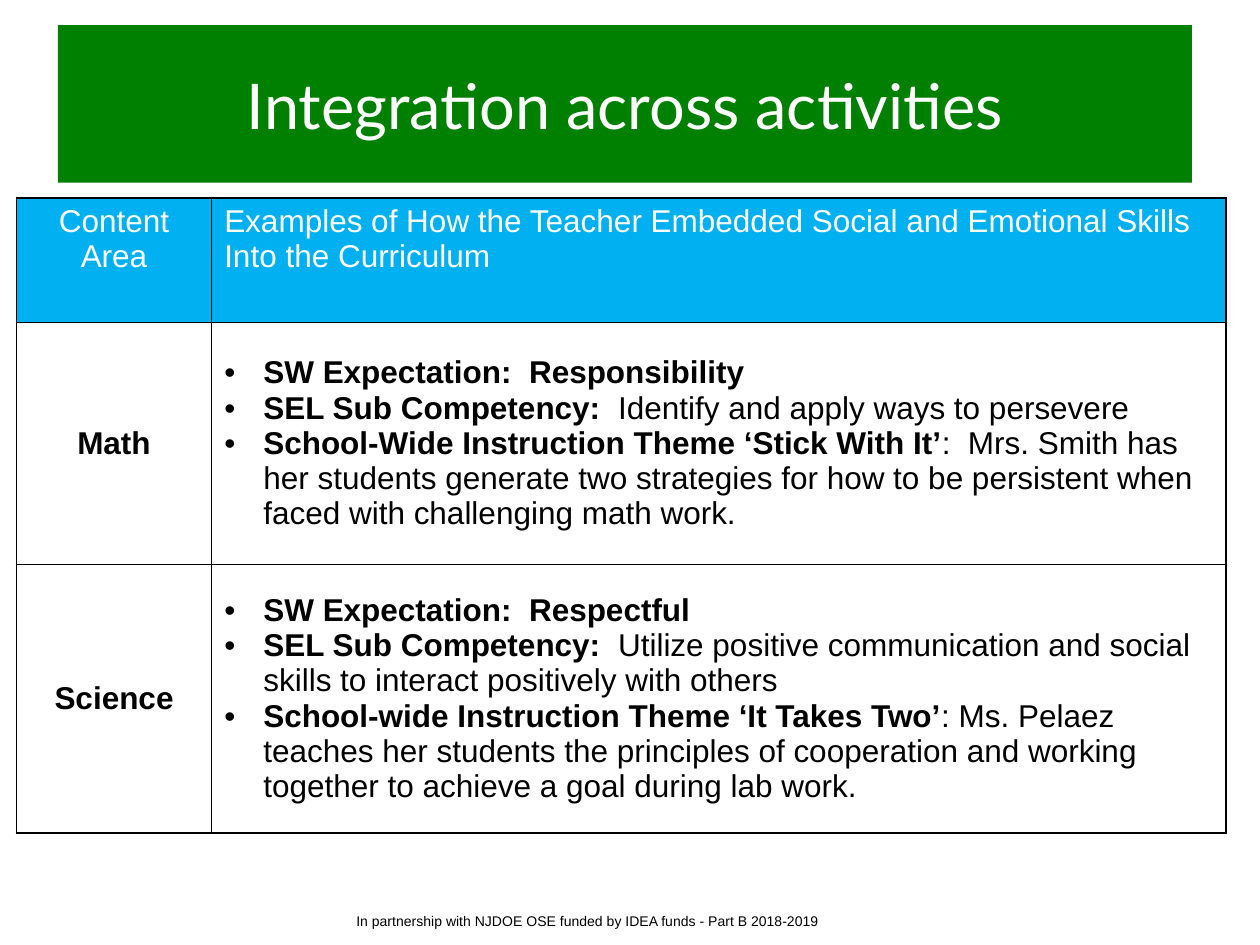
from lxml import etree
from pptx import Presentation
from pptx.dml.color import RGBColor
from pptx.enum.text import MSO_ANCHOR, MSO_AUTO_SIZE, PP_ALIGN
from pptx.oxml.ns import qn
from pptx.util import Inches, Pt

CENTER, LEFT = PP_ALIGN.CENTER, PP_ALIGN.LEFT
TOP, MIDDLE = MSO_ANCHOR.TOP, MSO_ANCHOR.MIDDLE
NO_FIT = MSO_AUTO_SIZE.NONE
TITLE_ONLY = 5

COLORS = {"green": "008000", "blue": "00B0F0", "white": "FFFFFF", "black": "000000"}
TITLE = {"name": "Lato", "size": Pt(36), "bold": False}
BODY = {"name": "Arial", "size": Pt(18), "bold": False}
STRONG = {**BODY, "bold": True}
FOOTER = {**BODY, "size": Pt(8)}

COLUMN_WIDTHS = [1.55, 8.05]
ROW_HEIGHTS = [0.99, 1.92, 2.13]
HEADINGS = [
    "Content Area",
    "Examples of How the Teacher Embedded Social and Emotional Skills Into the Curriculum",
]
SUBJECTS = [
    ("Math", [
        ("SW Expectation:  Responsibility", ""),
        ("SEL Sub Competency:  ", "Identify and apply ways to persevere"),
        ("School-Wide Instruction Theme ‘Stick With It’",
         ":  Mrs. Smith has her students generate two strategies for how to be "
         "persistent when faced with challenging math work."),
    ]),
    ("Science", [
        ("SW Expectation:  Respectful", ""),
        ("SEL Sub Competency:  ",
         "Utilize positive communication and social skills to interact positively with others"),
        ("School-wide Instruction Theme ‘It Takes Two’",
         ": Ms. Pelaez  teaches her students the principles of cooperation and "
         "working together to achieve a goal during lab work."),
    ]),
]


def paint(fill, color):
    """Fill an element with a solid named colour."""
    fill.solid()
    fill.fore_color.rgb = RGBColor.from_string(COLORS[color])


def add_span(para, text, style, color="black"):
    """Append a formatted run to a paragraph."""
    span = para.add_run()
    span.text = text
    for name, value in style.items():
        setattr(span.font, name, value)
    span.font.color.rgb = RGBColor.from_string(COLORS[color])


def add_bullet(para):
    """Give a paragraph a hanging round bullet."""
    properties = para._p.get_or_add_pPr()
    properties.set("marL", str(Inches(0.31)))
    properties.set("indent", str(-Inches(0.31)))
    etree.SubElement(properties, qn("a:buFont"), typeface="Arial")
    etree.SubElement(properties, qn("a:buChar"), char="•")


def add_borders(cell):
    """Draw a thin black line on every side of a cell."""
    properties = cell._tc.get_or_add_tcPr()
    for side in ("lnL", "lnR", "lnT", "lnB"):
        line = etree.SubElement(properties, qn(f"a:{side}"), w=str(Pt(1)))
        fill = etree.SubElement(line, qn("a:solidFill"))
        etree.SubElement(fill, qn("a:srgbClr"), val=COLORS["black"])


def format_cell(cell, anchor):
    """Set the borders, margins and anchor of a cell."""
    add_borders(cell)
    cell.margin_left = cell.margin_right = Inches(0.1)
    cell.margin_top = cell.margin_bottom = Inches(0.05)
    cell.vertical_anchor = anchor


def fill_heading(cell, text, align):
    """Write a white heading on a blue cell."""
    format_cell(cell, TOP)
    paint(cell.fill, "blue")
    para = cell.text_frame.paragraphs[0]
    para.alignment = align
    add_span(para, text, BODY, "white")


def fill_subject(cell, text):
    """Write a bold centred subject name."""
    format_cell(cell, MIDDLE)
    cell.fill.background()
    para = cell.text_frame.paragraphs[0]
    para.alignment = CENTER
    add_span(para, text, STRONG)


def fill_examples(cell, examples):
    """Write bulleted examples with bold lead-ins."""
    format_cell(cell, MIDDLE)
    cell.fill.background()
    frame = cell.text_frame
    for index, (lead, detail) in enumerate(examples):
        para = frame.add_paragraph() if index else frame.paragraphs[0]
        add_bullet(para)
        add_span(para, lead, STRONG)
        if detail:
            add_span(para, detail, BODY)


def add_curriculum_table(page):
    """Add the table of subjects and their examples."""
    table = page.shapes.add_table(
        len(ROW_HEIGHTS), len(COLUMN_WIDTHS), Inches(0.13), Inches(1.57),
        Inches(sum(COLUMN_WIDTHS)), Inches(sum(ROW_HEIGHTS))).table
    table.first_row = table.horz_banding = False
    for column, width in zip(table.columns, COLUMN_WIDTHS):
        column.width = Inches(width)
    for row, height in zip(table.rows, ROW_HEIGHTS):
        row.height = Inches(height)
    for index, (text, align) in enumerate(zip(HEADINGS, (CENTER, LEFT))):
        fill_heading(table.cell(0, index), text, align)
    for index, (subject, examples) in enumerate(SUBJECTS, start=1):
        fill_subject(table.cell(index, 0), subject)
        fill_examples(table.cell(index, 1), examples)


def write_line(box, text, style, color):
    """Write one centred line in a box."""
    frame = box.text_frame
    frame.word_wrap = True
    frame.auto_size = NO_FIT
    frame.vertical_anchor = MIDDLE
    para = frame.paragraphs[0]
    para.alignment = CENTER
    add_span(para, text, style, color)


def add_title(page):
    """Place the title on its green band."""
    title = page.shapes.title
    title.left, title.top = Inches(0.46), Inches(0.2)
    title.width, title.height = Inches(9), Inches(1.25)
    paint(title.fill, "green")
    write_line(title, "Integration across activities", TITLE, "white")


def add_footer(page):
    """Add the funding note at the bottom."""
    box = page.shapes.add_textbox(Inches(2.5), Inches(7.19), Inches(4.33), Inches(0.23))
    write_line(box, "In partnership with NJDOE OSE funded by IDEA funds - Part B 2018-2019",
               FOOTER, "black")


def main():
    """Build and save the deck."""
    deck = Presentation()
    deck.slide_width, deck.slide_height = Inches(10), Inches(7.5)
    page = deck.slides.add_slide(deck.slide_layouts[TITLE_ONLY])
    add_title(page)
    add_curriculum_table(page)
    add_footer(page)
    deck.save("out.pptx")


if __name__ == "__main__":
    main()
